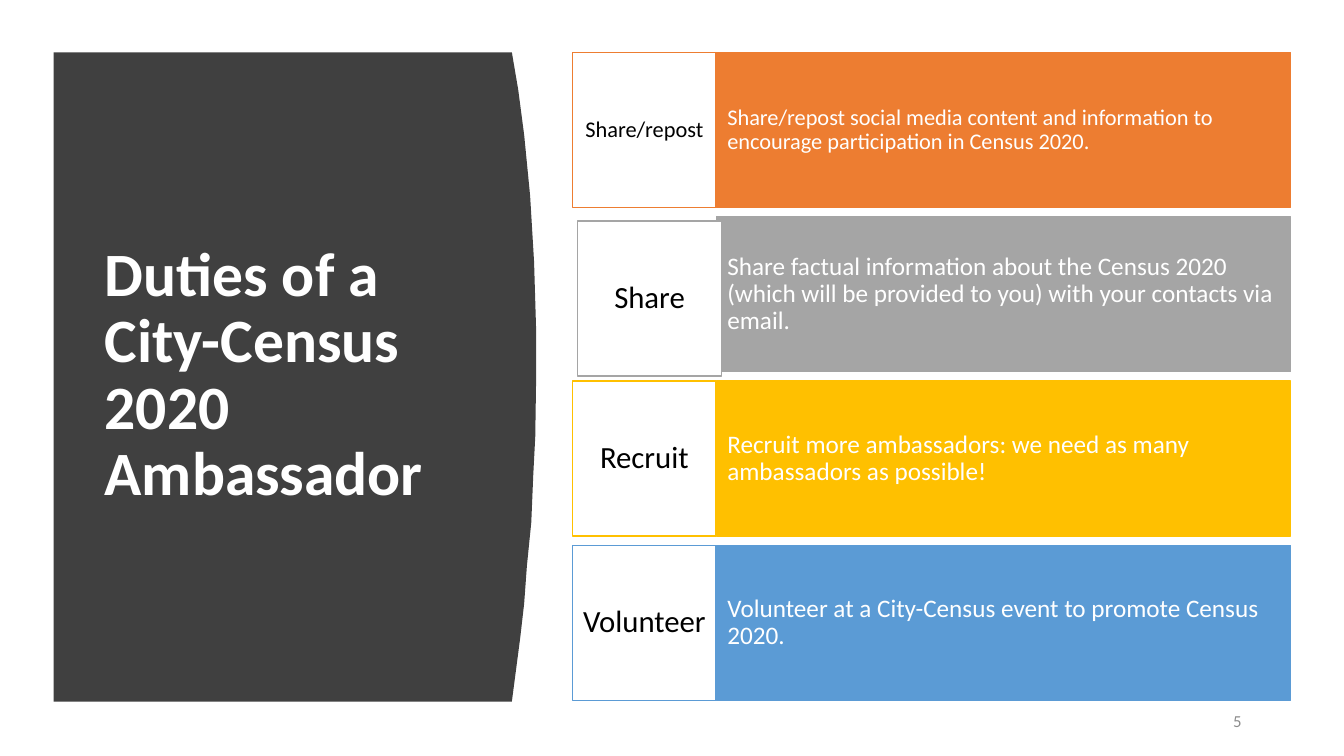
import pptx
import pptx.util
import pptx.dml.color
import pptx.enum.shapes
import pptx.enum.text

Cm = pptx.util.Cm
Align = pptx.enum.text.PP_ALIGN

TOP, BASE = 1.32, 17.68
STEP, HIGH = 4.14, 3.91
TAG_X, TAG_W = 14.43, 3.62
CARD_X, CARD_W = 18.05, 14.48

CURVE = [
    (12.9, TOP), (13.06, 2.26), (13.21, 3.4), (13.36, 4.93), (13.46, 6.6),
    (13.51, 8.26), (13.51, 9.65), (13.49, 11), (13.44, 11.96), (13.39, 13.16),
    (13.28, 14.25), (13.21, 15.21), (13.11, 16.08), (12.98, 17.07), (12.9, BASE),
]

DUTIES = [
    ("Share/repost", 16, "Share/repost social media content and information to "
     "encourage participation in Census 2020.", 16, "ED7D31", (0, 0)),
    ("Share", 22, "Share factual information about the Census 2020 (which will "
     "be provided to you) with your contacts via email.", 18, "A5A5A5", (0.13, 0.11)),
    ("Recruit", 22, "Recruit more ambassadors: we need as many ambassadors as "
     "possible!", 18, "FFC000", (0, 0)),
    ("Volunteer", 22, "Volunteer at a City-Census event to promote Census 2020.",
     18, "5B9BD5", (0, 0)),
]


def color(code):
    return pptx.dml.color.RGBColor.from_string(code)


def write(shape, text, size, ink, align, pad, bold=False, lead=0.9):
    frame = shape.text_frame
    frame.word_wrap = True
    frame.vertical_anchor = pptx.enum.text.MSO_ANCHOR.MIDDLE
    frame.margin_left = frame.margin_right = Cm(pad[0])
    frame.margin_top = frame.margin_bottom = Cm(pad[1])
    line = frame.paragraphs[0]
    line.text = text
    line.alignment = align
    line.line_spacing = lead
    line.font.name = "Calibri"
    line.font.size = pptx.util.Pt(size)
    line.font.bold = bold
    line.font.color.rgb = color(ink)


def add_panel(slide):
    start, *rest = [(Cm(x), Cm(y)) for x, y in [(1.35, TOP)] + CURVE + [(1.35, BASE)]]
    build = slide.shapes.build_freeform(*start)
    build.add_line_segments(rest, close=True)
    panel = build.convert_to_shape()
    panel.shadow.inherit = False
    panel.fill.solid()
    panel.fill.fore_color.rgb = color("404040")
    panel.line.fill.background()


def add_label(slide, box, *style, **extra):
    label = slide.shapes.add_textbox(*map(Cm, box))
    write(label, *style, **extra)


def add_box(slide, box, fill, edge, *style):
    kind = pptx.enum.shapes.MSO_SHAPE.RECTANGLE
    rect = slide.shapes.add_shape(kind, *map(Cm, box))
    rect.shadow.inherit = False
    rect.fill.solid()
    rect.fill.fore_color.rgb = color(fill)
    rect.line.color.rgb = color(edge)
    rect.line.width = pptx.util.Pt(1)
    write(rect, *style)


def add_duty(slide, top, tag, tag_size, text, size, hue, shift):
    add_box(slide, (CARD_X, top, CARD_W, HIGH), hue, hue,
            text, size, "FFFFFF", Align.LEFT, (0.28, 0.99))
    add_box(slide, (TAG_X + shift[0], top + shift[1], TAG_W, HIGH), "FFFFFF", hue,
            tag, tag_size, "000000", Align.CENTER, (0.2, 0.38))


def main():
    deck = pptx.Presentation()
    deck.slide_width, deck.slide_height = Cm(33.87), Cm(19.05)
    slide = deck.slides.add_slide(deck.slide_layouts[6])
    add_panel(slide)
    add_label(slide, (2.39, 2.82, 9.5, 13.31), "Duties of a City-Census 2020 Ambassador",
              44, "FFFFFF", Align.LEFT, (0.25, 0.13), bold=True)
    add_label(slide, (29.79, 17.65, 1.75, 1.02), "5",
              12, "8C8C8C", Align.RIGHT, (0.25, 0.13), lead=1.0)
    for row, duty in enumerate(DUTIES):
        add_duty(slide, TOP + row * STEP, *duty)
    deck.save("out.pptx")


if __name__ == "__main__":
    main()
